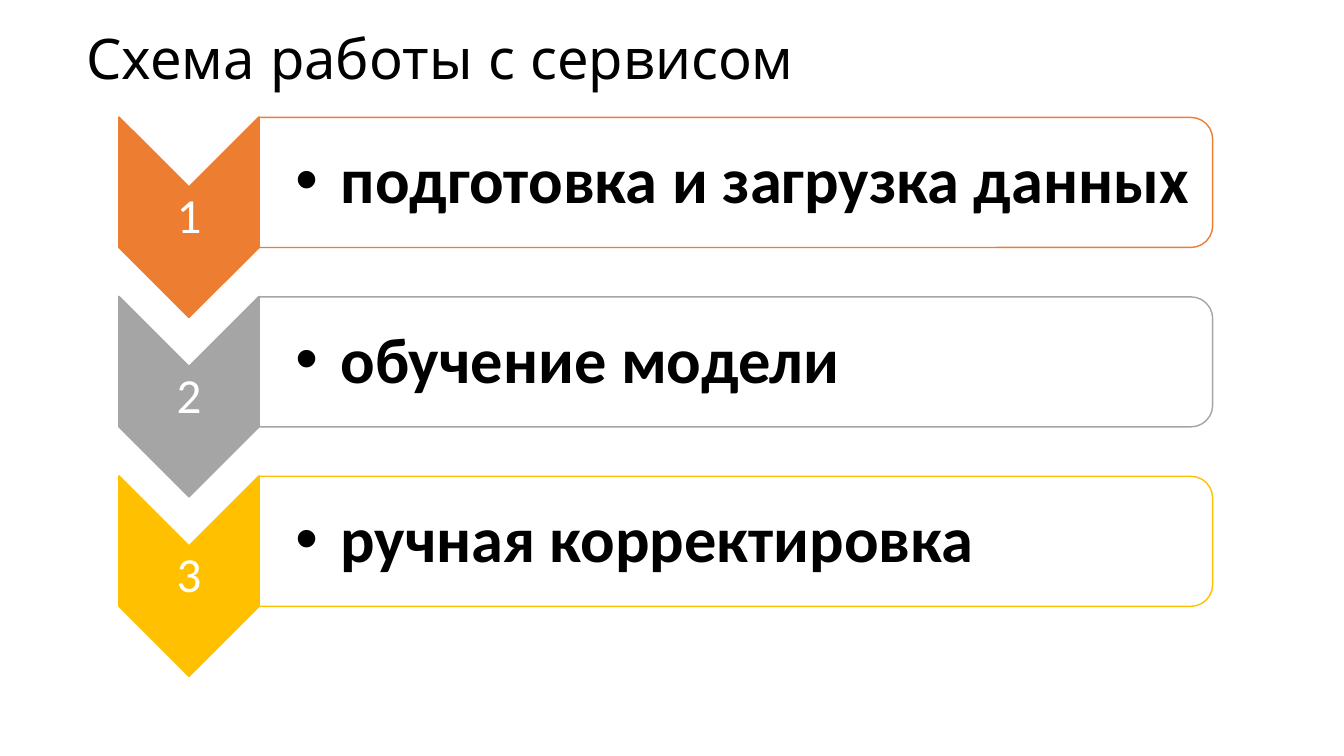
from lxml.etree import SubElement
from pptx import Presentation
from pptx.dml.color import RGBColor
from pptx.enum.shapes import MSO_SHAPE
from pptx.enum.text import MSO_ANCHOR, PP_ALIGN
from pptx.oxml.ns import qn
from pptx.util import Inches, Pt

COLORS = {
    "ink": "000000",
    "paper": "FFFFFF",
    "orange": "ED7D31",
    "gray": "A5A5A5",
    "gold": "FFC000",
}
STEPS = [
    ("подготовка и загрузка данных", "orange"),
    ("обучение модели", "gray"),
    ("ручная корректировка", "gold"),
]
COLUMNS, ROWS = 40, 30
CHEVRON_LEFT, CHEVRON_WIDTH = 3.54, 4.17
BAR_LEFT = CHEVRON_LEFT + CHEVRON_WIDTH
FIRST_TOP, STEP_ROWS = 4.64, 7.12


def color(name):
    return RGBColor.from_string(COLORS[name])


class SchemePage:
    def __init__(self, deck):
        self.page = deck.slides.add_slide(deck.slide_layouts[6])
        self.column = deck.slide_width / COLUMNS
        self.row = deck.slide_height / ROWS

    def place(self, left, top, width, height):
        return [
            round(left * self.column),
            round(top * self.row),
            round(width * self.column),
            round(height * self.row),
        ]

    def turned_shape(self, kind, area, fill, line, opacity=None):
        left, top, width, height = self.place(*area)
        shift = (width - height) // 2
        shape = self.page.shapes.add_shape(kind, left + shift, top - shift, height, width)
        shape.rotation = 90
        shape.shadow.inherit = False
        shape.fill.solid()
        shape.fill.fore_color.rgb = color(fill)
        shape.line.color.rgb = color(line)
        shape.line.width = Pt(1)
        if opacity:
            solid = shape.fill._xPr.find(qn("a:solidFill"))
            SubElement(solid[0], qn("a:alpha"), val=str(opacity * 1000))

    def text(self, words, area, size, font="Calibri", ink="ink", bold=False,
             align=PP_ALIGN.LEFT, insets=(0.1, 0.05, 0.1, 0.05), hanging=None):
        box = self.page.shapes.add_textbox(*self.place(*area))
        frame = box.text_frame
        frame.word_wrap = True
        frame.vertical_anchor = MSO_ANCHOR.MIDDLE
        (frame.margin_left, frame.margin_top,
         frame.margin_right, frame.margin_bottom) = map(Inches, insets)
        para = frame.paragraphs[0]
        para.alignment = align
        para.line_spacing = 0.9
        if hanging:
            properties = para._p.get_or_add_pPr()
            properties.set("marL", str(Inches(hanging)))
            properties.set("indent", str(-Inches(hanging)))
            SubElement(properties, qn("a:buFont"), typeface="Arial")
            SubElement(properties, qn("a:buChar"), char="•")
        span = para.add_run()
        span.text = words
        span.font.name = font
        span.font.size = Pt(size)
        span.font.bold = bold
        span.font.color.rgb = color(ink)

    def step(self, number, words, accent):
        top = FIRST_TOP + (number - 1) * STEP_ROWS
        self.turned_shape(MSO_SHAPE.CHEVRON,
                          (CHEVRON_LEFT, top, CHEVRON_WIDTH, 7.96), accent, accent)
        self.text(str(number), (CHEVRON_LEFT, top + 2.8, CHEVRON_WIDTH, 2.4), 35,
                  ink="paper", align=PP_ALIGN.CENTER, insets=(0.02,) * 4)
        self.turned_shape(MSO_SHAPE.ROUND_2_SAME_RECTANGLE,
                          (BAR_LEFT, top + 0.02, 28.38, 5.16), "paper", accent, opacity=90)
        self.text(words, (BAR_LEFT, top + 0.28, 28.2, 4.68), 46, bold=True,
                  insets=(0.36, 0.03, 0.03, 0.03), hanging=0.45)


def main():
    deck = Presentation()
    deck.slide_width = Inches(13.33)
    deck.slide_height = Inches(7.5)
    scheme = SchemePage(deck)
    scheme.text("Схема работы с сервисом", (2.28, 1.08, 31.56, 2.68), 40, font="Quicksand")
    for number, (words, accent) in enumerate(STEPS, 1):
        scheme.step(number, words, accent)
    deck.save("out.pptx")


if __name__ == "__main__":
    main()
